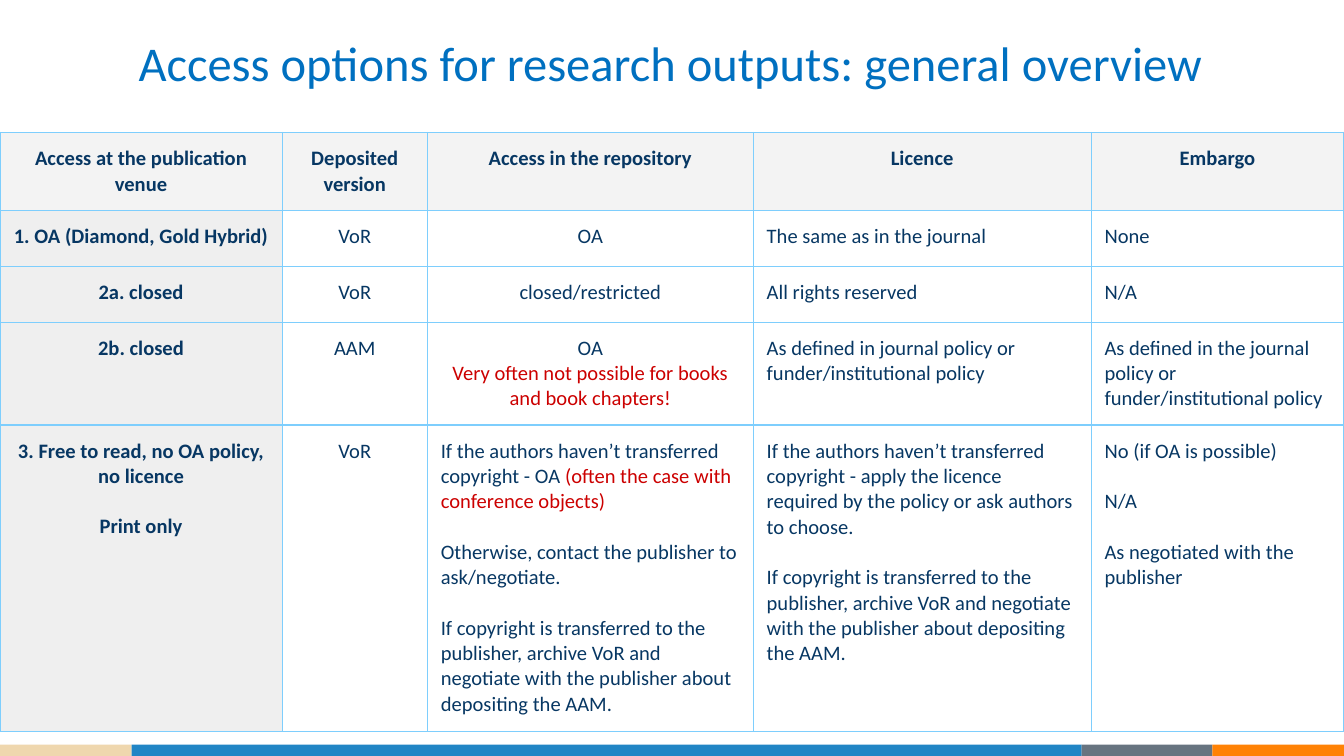
from lxml import etree
from pptx import Presentation
from pptx.dml.color import RGBColor
from pptx.enum.shapes import MSO_SHAPE
from pptx.enum.text import MSO_ANCHOR, MSO_AUTO_SIZE, PP_ALIGN
from pptx.oxml.ns import qn
from pptx.util import Pt

RECTANGLE = MSO_SHAPE.RECTANGLE
BOTTOM = MSO_ANCHOR.BOTTOM
NO_AUTOFIT = MSO_AUTO_SIZE.NONE
LEFT, CENTER = PP_ALIGN.LEFT, PP_ALIGN.CENTER

FONT = "Calibri"
NAVY, RED, TITLE_BLUE, BORDER = "073763", "CC0000", "0070C0", "7ECEFD"
HEADER_FILL, LABEL_FILL = "F3F3F3", "EFEFEF"
INSET = Pt(7.2)
PARAGRAPH_GAP = Pt(13.4)


def color(hex_string):
    return RGBColor.from_string(hex_string)


def add_borders(cell):
    properties = cell._tc.get_or_add_tcPr()
    for side in ("a:lnL", "a:lnR", "a:lnT", "a:lnB"):
        line = etree.SubElement(properties, qn(side), w=str(Pt(0.75)))
        fill = etree.SubElement(line, qn("a:solidFill"))
        etree.SubElement(fill, qn("a:srgbClr"), val=BORDER)


deck = Presentation()
deck.slide_width, deck.slide_height = Pt(720), Pt(405)
page = deck.slides.add_slide(deck.slide_layouts[5])

# Colour band along the bottom edge
left = 0
for width, band_color in ((70.5, "EFD7AE"), (509, "2185C5"),
                          (70, "677480"), (70.5, "FF8205")):
    band = page.shapes.add_shape(RECTANGLE, Pt(left), Pt(399), Pt(width), Pt(6))
    band.shadow.inherit = False
    band.fill.solid()
    band.fill.fore_color.rgb = color(band_color)
    band.line.fill.background()
    left += width

# Title
title = page.shapes.title
title.left, title.top, title.width, title.height = Pt(67), Pt(21), Pt(597), Pt(35.3)
frame = title.text_frame
frame.text = "Access options for research outputs: general overview"
frame.auto_size = NO_AUTOFIT
frame.word_wrap = True
frame.vertical_anchor = BOTTOM
frame.margin_left = frame.margin_right = frame.margin_top = frame.margin_bottom = INSET
para = frame.paragraphs[0]
para.alignment = LEFT
para.font.name, para.font.size = FONT, Pt(26)
para.font.color.rgb = color(TITLE_BLUE)

# Each cell is a list of paragraphs; text after "|" is red
TRANSFERRED = ("If copyright is transferred to the publisher, archive VoR and "
               "negotiate with the publisher about depositing the AAM.")
ROWS = [
    [["Access at the publication venue"], ["Deposited version"],
     ["Access in the repository"], ["Licence"], ["Embargo"]],
    [["1. OA (Diamond, Gold Hybrid)"], ["VoR"], ["OA"],
     ["The same as in the journal"], ["None"]],
    [["2a. closed"], ["VoR"], ["closed/restricted"],
     ["All rights reserved"], ["N/A"]],
    [["2b. closed"], ["AAM"],
     ["OA", "|Very often not possible for books and book chapters!"],
     ["As defined in journal policy or funder/institutional policy"],
     ["As defined in the journal policy or funder/institutional policy"]],
    [["3. Free to read, no OA policy, no licence", "Print only"], ["VoR"],
     ["If the authors haven’t transferred copyright - OA "
      "|(often the case with conference objects)",
      "Otherwise, contact the publisher to ask/negotiate.", TRANSFERRED],
     ["If the authors haven’t transferred copyright - apply the licence "
      "required by the policy or ask authors to choose.", TRANSFERRED],
     ["No (if OA is possible)", "N/A", "As negotiated with the publisher"]],
]
COLUMN_WIDTHS = [151.2, 77.8, 174.6, 181, 135.4]
ROW_HEIGHTS = [41.6, 30, 30, 55, 164]
LAST_ROW = len(ROWS) - 1

table = page.shapes.add_table(len(ROWS), len(COLUMN_WIDTHS), Pt(0), Pt(71),
                              Pt(sum(COLUMN_WIDTHS)), Pt(sum(ROW_HEIGHTS))).table
table.first_row = table.horz_banding = False
for column, width in zip(table.columns, COLUMN_WIDTHS):
    column.width = Pt(width)
for row, height in zip(table.rows, ROW_HEIGHTS):
    row.height = Pt(height)

for row_index, row in enumerate(ROWS):
    for column_index, paragraphs in enumerate(row):
        cell = table.cell(row_index, column_index)
        is_header, is_label = row_index == 0, column_index == 0
        centered = (is_header or column_index < 2
                    or column_index == 2 and row_index < LAST_ROW)
        cell.margin_left = cell.margin_right = INSET
        cell.margin_top = cell.margin_bottom = INSET
        add_borders(cell)
        if is_header or is_label:
            cell.fill.solid()
            cell.fill.fore_color.rgb = color(HEADER_FILL if is_header else LABEL_FILL)
        else:
            cell.fill.background()

        for index, text in enumerate(paragraphs):
            para = cell.text_frame.paragraphs[0] if index == 0 else cell.text_frame.add_paragraph()
            para.alignment = CENTER if centered else LEFT
            if index and row_index == LAST_ROW:
                para.space_before = PARAGRAPH_GAP
            para.font.name, para.font.size = FONT, Pt(11)
            para.font.bold = is_header or is_label
            for part, part_color in zip(text.split("|"), (NAVY, RED)):
                if part:
                    span = para.add_run()
                    span.text = part
                    span.font.color.rgb = color(part_color)

deck.save("out.pptx")
